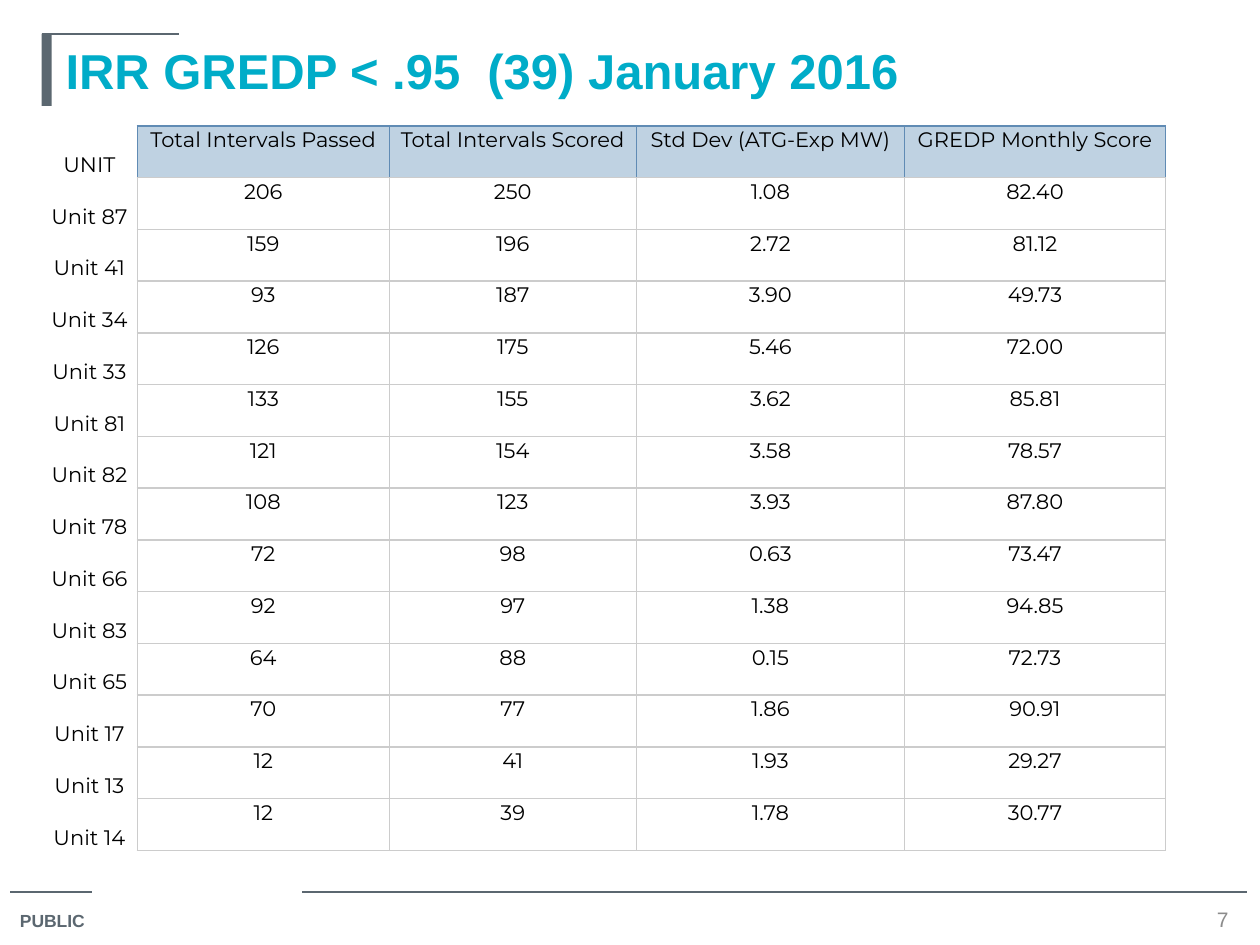
from lxml import etree
from pptx import Presentation
from pptx.dml.color import RGBColor
from pptx.enum.shapes import MSO_CONNECTOR, MSO_SHAPE
from pptx.enum.text import MSO_ANCHOR, PP_ALIGN
from pptx.oxml.ns import qn
from pptx.util import Inches, Pt

LEFT, CENTER = PP_ALIGN.LEFT, PP_ALIGN.CENTER
TOP, MIDDLE, BOTTOM = MSO_ANCHOR.TOP, MSO_ANCHOR.MIDDLE, MSO_ANCHOR.BOTTOM
NO_STYLE = "{2D5ABB26-0587-4C30-8999-92F81FD0307C}"

COLORS = {"title": "00ACC8", "slate": "5B6770", "page": "8C8C8C", "text": "000000",
          "header": "BFD2E2", "header_edge": "608BB4", "grid": "CCCCCC"}

HEADERS = ["UNIT", "Total Intervals Passed", "Total Intervals Scored",
           "Std Dev (ATG-Exp MW)", "GREDP Monthly Score"]
UNITS = [
    ("Unit 87", "206", "250", "1.08", "82.40"),
    ("Unit 41", "159", "196", "2.72", "81.12"),
    ("Unit 34", "93", "187", "3.90", "49.73"),
    ("Unit 33", "126", "175", "5.46", "72.00"),
    ("Unit 81", "133", "155", "3.62", "85.81"),
    ("Unit 82", "121", "154", "3.58", "78.57"),
    ("Unit 78", "108", "123", "3.93", "87.80"),
    ("Unit 66", "72", "98", "0.63", "73.47"),
    ("Unit 83", "92", "97", "1.38", "94.85"),
    ("Unit 65", "64", "88", "0.15", "72.73"),
    ("Unit 17", "70", "77", "1.86", "90.91"),
    ("Unit 13", "12", "41", "1.93", "29.27"),
    ("Unit 14", "12", "39", "1.78", "30.77"),
]
COL_WIDTHS = [0.76, 2, 1.96, 2.13, 2.07]
TABLE_HEIGHT = 5.75


def write(tf, text, color, align, **font):
    p = tf.paragraphs[0]
    p.alignment = align
    r = p.add_run()
    r.text = text
    r.font.color.rgb = RGBColor.from_string(COLORS[color])
    for name, value in font.items():
        setattr(r.font, name, value)


def add_borders(cell, edges):
    """Draw 1 pt borders; edges maps L, R, T, B, in that order, to a colour or None."""
    tcPr = cell._tc.get_or_add_tcPr()
    for i, (side, color) in enumerate(edges.items()):
        ln = etree.Element(qn(f"a:ln{side}"), w=str(Pt(1)))
        if color:
            fill = etree.SubElement(ln, qn("a:solidFill"))
            etree.SubElement(fill, qn("a:srgbClr"), val=COLORS[color])
        else:
            etree.SubElement(ln, qn("a:noFill"))
        tcPr.insert(i, ln)


prs = Presentation()
prs.slide_width, prs.slide_height = Inches(10), Inches(7.5)
s = prs.slides.add_slide(prs.slide_layouts[5])

# Footer rules and title accent
for x1, x2, y in [(0.08, 0.73, 7.08), (2.4, 9.9, 7.08), (0.33, 1.42, 0.27)]:
    line = s.shapes.add_connector(MSO_CONNECTOR.STRAIGHT, Inches(x1), Inches(y),
                                  Inches(x2), Inches(y))
    line.line.color.rgb = RGBColor.from_string(COLORS["slate"])
    line.line.width = Pt(0.75)
    etree.SubElement(line._element.spPr, qn("a:effectLst"))

bar = s.shapes.add_shape(MSO_SHAPE.RECTANGLE, Inches(0.33), Inches(0.27),
                         Inches(0.08), Inches(0.57))
bar.shadow.inherit = False
bar.fill.solid()
bar.fill.fore_color.rgb = RGBColor.from_string(COLORS["slate"])
bar.line.fill.background()

# Title
title = s.shapes.title
title.left, title.top, title.width, title.height = map(Inches, (0.42, 0.27, 9.25, 0.65))
title.text_frame.vertical_anchor = TOP
write(title.text_frame, "IRR GREDP < .95  (39) January 2016", "title", LEFT,
      name="Arial", size=Pt(28), bold=True)

# Footer label
label = s.shapes.add_textbox(*map(Inches, (0.06, 7.17, 0.77, 0.28)))
write(label.text_frame, "PUBLIC", "slate", LEFT, name="Arial", size=Pt(10), bold=True)

# Page number
page = s.shapes.add_textbox(*map(Inches, (9.58, 7.18, 0.25, 0.23)))
tf = page.text_frame
tf.margin_left = tf.margin_right = tf.margin_top = tf.margin_bottom = 0
tf.vertical_anchor = MIDDLE
write(tf, "7", "page", CENTER, name="Arial", size=Pt(12))

# Unit scores
rows = [HEADERS, *UNITS]
frame = s.shapes.add_table(len(rows), len(HEADERS), Inches(0.33), Inches(1),
                           Inches(sum(COL_WIDTHS)), Inches(TABLE_HEIGHT))
table = frame.table
table.first_row = table.horz_banding = False
table._tbl.tblPr.find(qn("a:tableStyleId")).text = NO_STYLE
for column, width in zip(table.columns, COL_WIDTHS):
    column.width = Inches(width)

for i, values in enumerate(rows):
    table.rows[i].height = Inches(TABLE_HEIGHT / len(rows))
    for j, value in enumerate(values):
        cell = table.cell(i, j)
        cell.margin_left = cell.margin_right = cell.margin_top = Inches(0.01)
        cell.margin_bottom = 0
        cell.vertical_anchor = TOP if j else BOTTOM
        write(cell.text_frame, value, "text", CENTER, name="Montserrat", size=Pt(12))
        if i == 0 and j:
            cell.fill.solid()
            cell.fill.fore_color.rgb = RGBColor.from_string(COLORS["header"])
        else:
            cell.fill.background()
        edge = "grid" if i else "header_edge"
        if j:
            add_borders(cell, {"L": edge, "R": edge, "T": edge if i != 1 else "grid", "B": "grid"})
        else:
            add_borders(cell, {"L": None, "R": edge, "T": None, "B": None})

prs.save("out.pptx")
